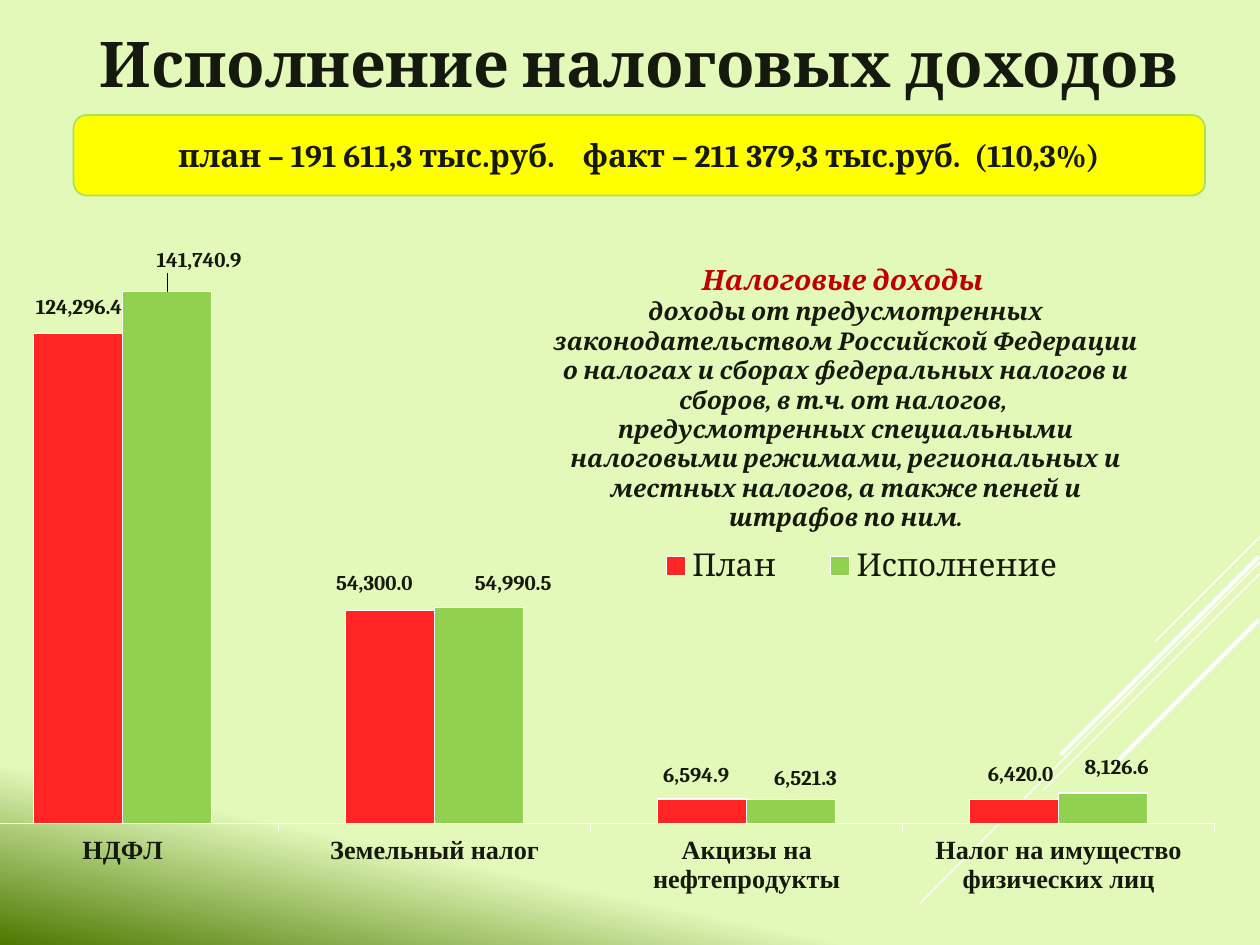
from lxml.etree import SubElement
from pptx import Presentation
from pptx.chart.data import CategoryChartData
from pptx.dml.color import RGBColor
from pptx.enum.chart import XL_CHART_TYPE, XL_LABEL_POSITION, XL_LEGEND_POSITION, XL_TICK_MARK
from pptx.enum.shapes import MSO_CONNECTOR, MSO_SHAPE
from pptx.enum.text import MSO_ANCHOR, PP_ALIGN
from pptx.oxml import parse_xml
from pptx.oxml.ns import nsdecls, qn
from pptx.util import Pt

COLORS = {
    "dark": "16190D", "white": "FFFFFF", "pale": "E2F9BA", "green": "4C7800",
    "yellow": "FFFF00", "lime": "A9E257", "crimson": "C00000",
    "plan": "FF2525", "fact": "92D050",
}
RAYS = [
    (720, 306.7, 660.2, 366.5, 0.75),
    (720, 321.1, 525.6, 516.2, 0.75),
    (720, 327.6, 596.2, 451.4, 0.75),
    (719.3, 318.2, 606.2, 431.3, 2.25),
    (719.3, 354.2, 637.2, 436.3, 2.25),
]
CHART_W, CHART_H = 720, 434.2
CATEGORIES = ["НДФЛ", "Земельный налог", "Акцизы на нефтепродукты",
              "Налог на имущество физических лиц"]
SERIES = [
    ("План", "plan", [124296.4, 54300, 6594.9, 6420],
     [(0.5, -5), (-9, -5.5), (-3.4, -3.8), (3.8, -4.8)]),
    ("Исполнение", "fact", [141740.9, 54990.5, 6521.3, 8126.6],
     [(18.2, -7.6), (19.4, -4.3), (8.2, -2), (7.7, -4.9)]),
]
NUMBER = "#,##0.0"
DEFINITION = ("доходы от предусмотренных законодательством Российской Федерации "
              "о налогах и сборах федеральных налогов и сборов, в т.ч. от налогов,  "
              "предусмотренных специальными налоговыми режимами, региональных и "
              "местных налогов, а также пеней и штрафов по ним.")


def rgb(name):
    return RGBColor.from_string(COLORS[name])


def set_font(font, size, color="dark", name="Cambria", bold=True, italic=False):
    font.size, font.name, font.bold, font.italic = Pt(size), name, bold, italic
    font.color.rgb = rgb(color)


def set_background(slide):
    fill = slide.background.fill
    fill.gradient()
    fill.gradient_angle = 258
    for stop, position, color in zip(fill.gradient_stops, (0.85, 1), ("pale", "green")):
        stop.position = position
        stop.color.rgb = rgb(color)


def add_ray(slide, x1, y1, x2, y2, width):
    s = slide.shapes.add_connector(MSO_CONNECTOR.STRAIGHT, Pt(x1), Pt(y1), Pt(x2), Pt(y2))
    s.line.color.rgb = rgb("white")
    s.line.width = Pt(width)
    SubElement(s._element.spPr, qn("a:effectLst"))


def write_text(s, paragraphs, anchor=MSO_ANCHOR.MIDDLE):
    tf = s.text_frame
    tf.word_wrap = True
    tf.vertical_anchor = anchor
    for i, (text, size, color, italic) in enumerate(paragraphs):
        p = tf.add_paragraph() if i else tf.paragraphs[0]
        p.text = text
        p.alignment = PP_ALIGN.CENTER
        set_font(p.font, size, color, italic=italic)


def add_text(slide, x, y, w, h, paragraphs, anchor=MSO_ANCHOR.MIDDLE):
    s = slide.shapes.add_textbox(Pt(x), Pt(y), Pt(w), Pt(h))
    write_text(s, paragraphs, anchor)


def add_banner(slide, x, y, w, h, text):
    s = slide.shapes.add_shape(MSO_SHAPE.ROUNDED_RECTANGLE, Pt(x), Pt(y), Pt(w), Pt(h))
    s.shadow.inherit = False
    s.fill.solid()
    s.fill.fore_color.rgb = rgb("yellow")
    s.line.color.rgb = rgb("lime")
    s.line.width = Pt(1)
    write_text(s, [(text, 18, "dark", False)])


def layout_xml(target=None, edge=False, **fractions):
    parts = [f'<c:layoutTarget val="{target}"/>'] if target else []
    if edge:
        parts += ['<c:xMode val="edge"/>', '<c:yMode val="edge"/>']
    parts += [f'<c:{key} val="{value}"/>' for key, value in fractions.items()]
    return parse_xml(f'<c:layout {nsdecls("c")}><c:manualLayout>{"".join(parts)}'
                     '</c:manualLayout></c:layout>')


def place(parent, layout, after=None):
    for old in parent.findall(qn("c:layout")):
        parent.remove(old)
    if after is None:
        parent.insert(0, layout)
    else:
        parent.find(qn(after)).addnext(layout)


def hide_leader_lines(labels):
    labels._element.append(parse_xml(
        f'<c:extLst {nsdecls("c")}><c:ext uri="{{CE6537A1-D6FC-4f65-9D91-7224C49458BB}}" '
        'xmlns:c15="http://schemas.microsoft.com/office/drawing/2012/chart">'
        '<c15:showLeaderLines val="0"/></c:ext></c:extLst>'))


def style_series(series, color, offsets):
    series.format.fill.solid()
    series.format.fill.fore_color.rgb = rgb(color)
    series.format.line.color.rgb = rgb("white")
    series.format.line.width = Pt(0.75)
    for i in range(len(offsets)):
        label = series.points[i].data_label
        set_font(label.font, 12)
        label.position = XL_LABEL_POSITION.OUTSIDE_END
    labels = series.data_labels
    labels.show_value = True
    labels.number_format = NUMBER
    labels.number_format_is_linked = False
    set_font(labels.font, 12)
    for d_lbl, (dx, dy) in zip(labels._element.findall(qn("c:dLbl")), offsets):
        place(d_lbl, layout_xml(x=dx / CHART_W, y=dy / CHART_H), "c:idx")
        d_lbl.find(qn("c:layout")).addnext(parse_xml(
            f'<c:numFmt {nsdecls("c")} formatCode="{NUMBER}" sourceLinked="0"/>'))
    hide_leader_lines(labels)


def add_tax_chart(slide, x, y):
    data = CategoryChartData(number_format=NUMBER)
    data.categories = CATEGORIES
    for name, _, values, _ in SERIES:
        data.add_series(name, values)
    chart = slide.shapes.add_chart(XL_CHART_TYPE.COLUMN_CLUSTERED, Pt(x), Pt(y),
                                   Pt(CHART_W), Pt(CHART_H), data).chart
    chart.has_title = False
    set_font(chart.font, 16.8, "white", "Quicksand", bold=False)

    plot = chart.plots[0]
    plot.gap_width = 150
    plot.overlap = 0
    plot.vary_by_categories = False
    for series, (_, color, _, offsets) in zip(plot.series, SERIES):
        style_series(series, color, offsets)

    values = chart.value_axis
    values.minimum_scale, values.maximum_scale = 500, 135000
    values.has_major_gridlines = False
    values.visible = False
    axis = chart.category_axis
    axis.major_tick_mark = XL_TICK_MARK.OUTSIDE
    axis.format.line.color.rgb = rgb("white")
    axis.format.line.width = Pt(0.75)
    set_font(axis.tick_labels.font, 15, name="Times New Roman")

    chart.has_legend = True
    legend = chart.legend
    legend.position = XL_LEGEND_POSITION.RIGHT
    legend.include_in_layout = False
    set_font(legend.font, 18, bold=False)
    place(legend._element, layout_xml(edge=True, x=0.53, y=0.48, w=0.38, h=0.08),
          "c:legendPos")
    place(chart._chartSpace.chart.plotArea,
          layout_xml("inner", True, x=0.009, y=0.158, w=0.991, h=0.7))


def main():
    prs = Presentation()
    prs.slide_width, prs.slide_height = Pt(720), Pt(540)
    slide = prs.slides.add_slide(prs.slide_layouts[6])
    set_background(slide)
    for ray in RAYS:
        add_ray(slide, *ray)
    add_text(slide, 28, 8.2, 674.6, 54.7,
             [("Исполнение налоговых доходов", 36, "dark", False)])
    add_banner(slide, 42, 65.7, 646.6, 46.1,
               "план – 191 611,3 тыс.руб.    факт – 211 379,3 тыс.руб.  (110,3%)")
    add_tax_chart(slide, -25.5, 97.9)
    add_text(slide, 309, 146.6, 348.5, 128.2,
             [("Налоговые доходы ", 16, "crimson", True), (DEFINITION, 14, "dark", True)],
             MSO_ANCHOR.TOP)
    prs.save("out.pptx")


if __name__ == "__main__":
    main()
